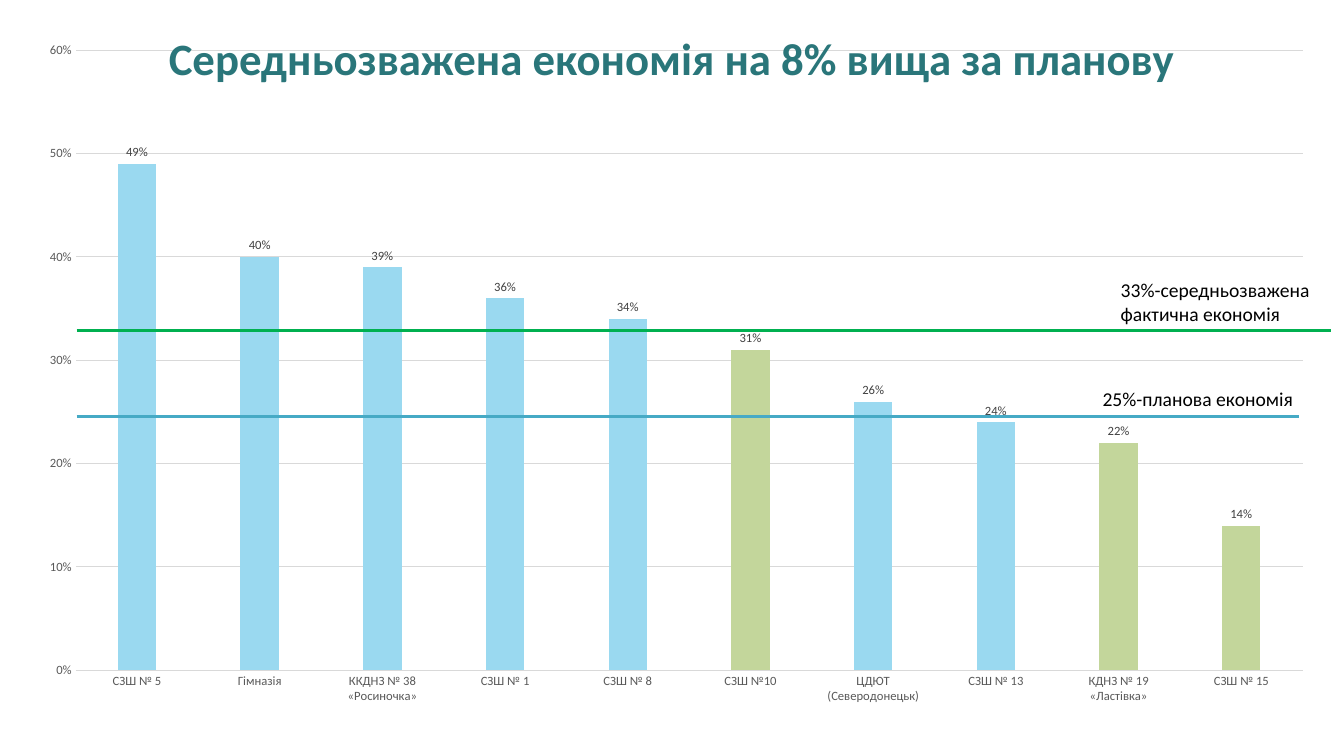
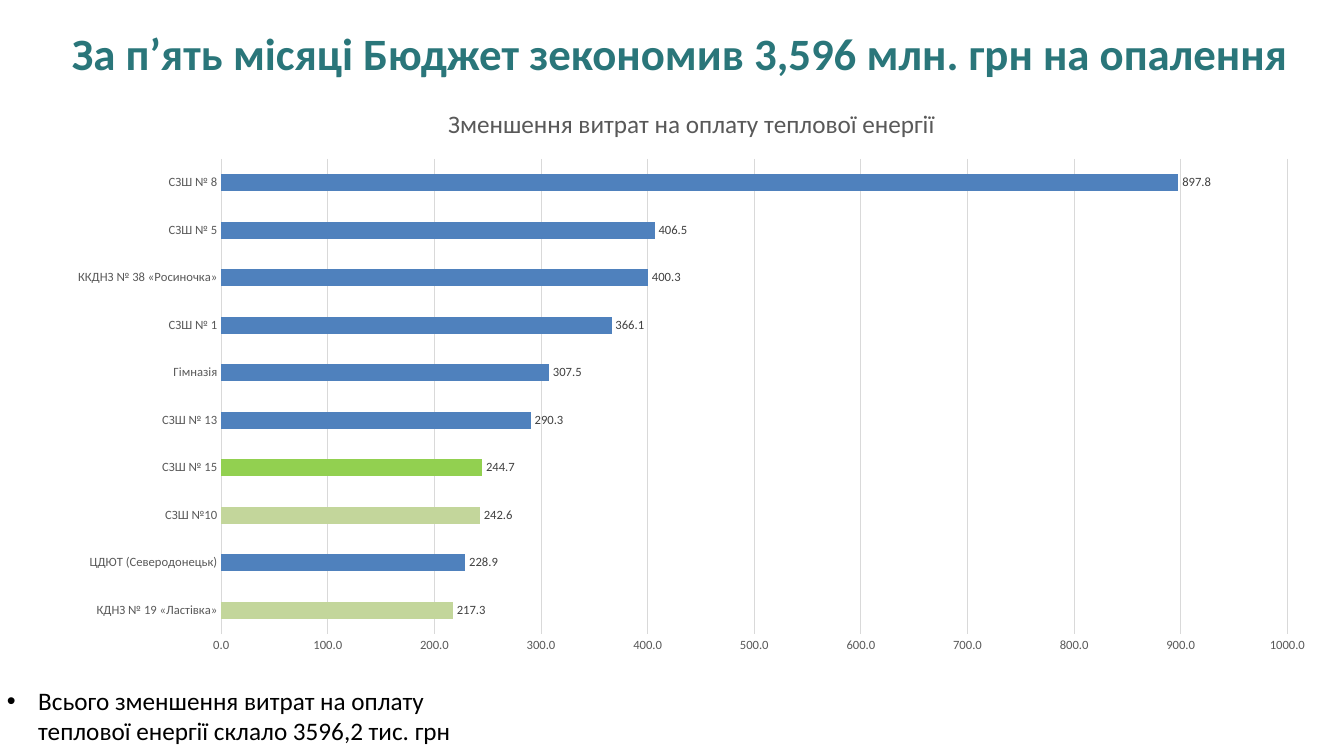
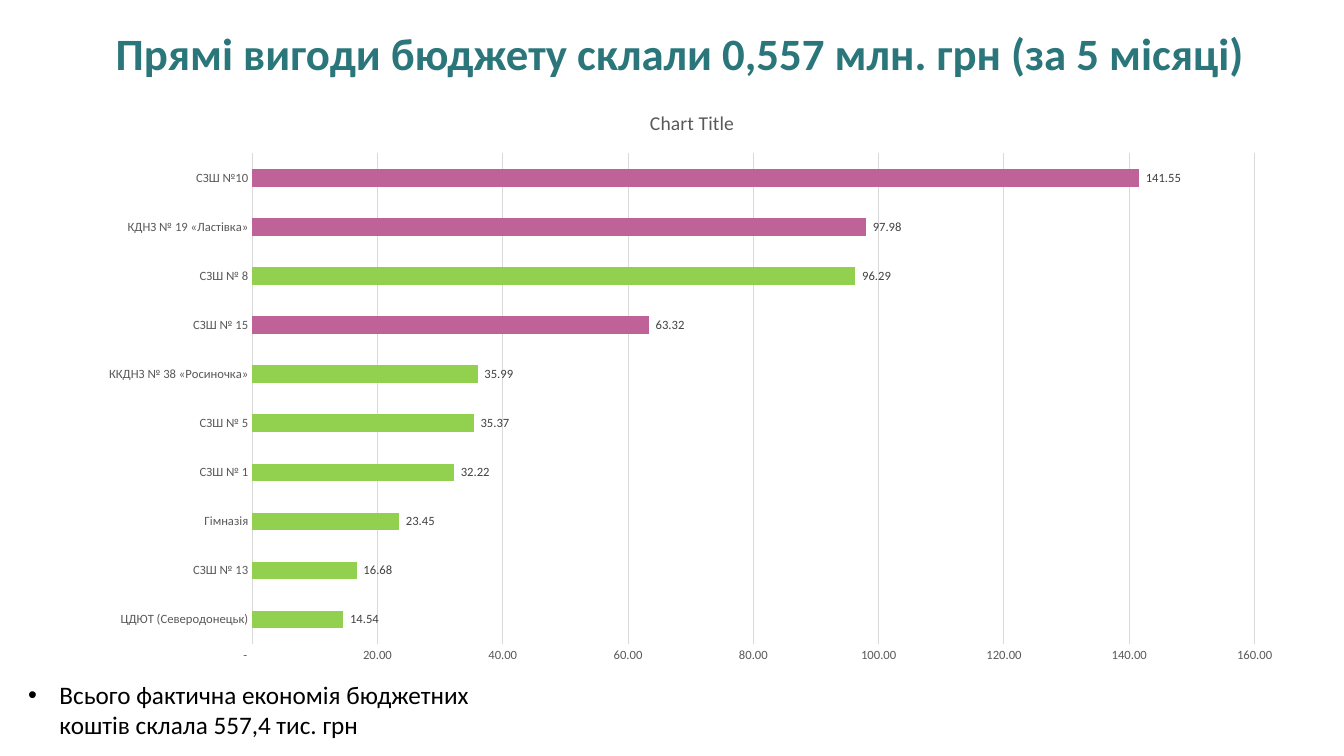
from collections import Counter

from lxml import etree
from pptx import Presentation
from pptx import util as u
from pptx.chart.data import CategoryChartData
from pptx.dml.color import RGBColor
from pptx.enum import chart as charts, shapes, text
from pptx.oxml import ns

FONT = "Calibri"
BLACK, TEAL, GRAY, LABEL, RULE = "000000", "2A767A", "595959", "404040", "D9D9D9"
SKY, BLUE, SAGE, LIME, PINK = "9AD9F0", "4F81BD", "C3D69B", "92D050", "BE6297"
PLANNED, ACTUAL = "46AAC5", "00B050"
MONEY = '_(* #,##0.00_);_(* \\(#,##0.00\\);_(* "-"??_);_(@_)'

TITLE_ONLY, TITLE_AND_BODY = 5, 1
TITLE_BOX = (1.35, 2.27, 98.55, 9.47)

ROSYNOCHKA = "ККДНЗ № 38 «Росиночка»"
LASTIVKA = "КДНЗ № 19 «Ластівка»"
YOUTH_CENTRE = "ЦДЮТ (Северодонецьк)"
GYMNASIUM = "Гімназія"

SAVINGS_SHARE = [
    ("СЗШ № 5", 0.49, SKY), (GYMNASIUM, 0.40, SKY), (ROSYNOCHKA, 0.39, SKY),
    ("СЗШ № 1", 0.36, SKY), ("СЗШ № 8", 0.34, SKY), ("СЗШ №10", 0.31, SAGE),
    (YOUTH_CENTRE, 0.26, SKY), ("СЗШ № 13", 0.24, SKY),
    (LASTIVKA, 0.22, SAGE), ("СЗШ № 15", 0.14, SAGE),
]
HEATING_SAVINGS = [
    (LASTIVKA, 217.3, SAGE), (YOUTH_CENTRE, 228.9, BLUE), ("СЗШ №10", 242.6, SAGE),
    ("СЗШ № 15", 244.7, LIME), ("СЗШ № 13", 290.3, BLUE), (GYMNASIUM, 307.5, BLUE),
    ("СЗШ № 1", 366.1, BLUE), (ROSYNOCHKA, 400.3, BLUE),
    ("СЗШ № 5", 406.5, BLUE), ("СЗШ № 8", 897.8, BLUE),
]
DIRECT_BENEFITS = [
    (YOUTH_CENTRE, 14.54, LIME), ("СЗШ № 13", 16.68, LIME), (GYMNASIUM, 23.45, LIME),
    ("СЗШ № 1", 32.22, LIME), ("СЗШ № 5", 35.37, LIME), (ROSYNOCHKA, 35.99, LIME),
    ("СЗШ № 15", 63.32, PINK), ("СЗШ № 8", 96.29, LIME),
    (LASTIVKA, 97.98, PINK), ("СЗШ №10", 141.55, PINK),
]


def color(value):
    return RGBColor.from_string(value)


class Deck:
    def __init__(self):
        self.presentation = Presentation()
        self.presentation.slide_width = u.Inches(13.333)
        self.presentation.slide_height = u.Inches(7.5)
        self.slide = None

    def new_slide(self, layout):
        layouts = self.presentation.slide_layouts
        self.slide = self.presentation.slides.add_slide(layouts[layout])

    def column(self, share):
        return u.Emu(round(self.presentation.slide_width * share / 100))

    def row(self, share):
        return u.Emu(round(self.presentation.slide_height * share / 100))

    def area(self, box):
        left, top, width, height = box
        return self.column(left), self.row(top), self.column(width), self.row(height)

    def place(self, shape, box):
        shape.left, shape.top, shape.width, shape.height = self.area(box)

    def style(self, font, size, value, bold=False):
        font.name = FONT
        font.size = u.Pt(size)
        font.bold = bold
        font.color.rgb = color(value)

    def fill(self, target, value):
        target.format.fill.solid()
        target.format.fill.fore_color.rgb = color(value)

    def add_words(self, shape, words, size, value=BLACK, bold=False):
        frame = shape.text_frame
        frame.word_wrap = True
        frame.auto_size = text.MSO_AUTO_SIZE.NONE
        paragraph = frame.paragraphs[0]
        run = paragraph.add_run()
        run.text = words
        self.style(run.font, size, value, bold)
        return paragraph

    def title(self, words, box=TITLE_BOX):
        shape = self.slide.shapes.title
        shape.element.getparent().append(shape.element)
        self.place(shape, box)
        paragraph = self.add_words(shape, words, 32, TEAL, True)
        paragraph.alignment = text.PP_ALIGN.CENTER
        shape.text_frame.vertical_anchor = text.MSO_ANCHOR.MIDDLE

    def summary(self, words, left, top):
        shape = self.slide.placeholders[1]
        self.place(shape, (left, top, 37.2, 13.47))
        paragraph = self.add_words(shape, words, 18)
        paragraph.space_before = u.Pt(0)
        properties = paragraph._p.get_or_add_pPr()
        indent = u.Inches(0.31)
        properties.set("marL", str(indent))
        properties.set("indent", str(-indent))
        etree.SubElement(properties, ns.qn("a:buFont")).set("typeface", "Arial")
        etree.SubElement(properties, ns.qn("a:buChar")).set("char", "•")

    def label(self, words, box):
        shape = self.slide.shapes.add_textbox(*self.area(box))
        self.add_words(shape, words, 14)
        shape.text_frame.auto_size = text.MSO_AUTO_SIZE.SHAPE_TO_FIT_TEXT

    def level(self, top, right, value, width):
        line = self.slide.shapes.add_connector(
            shapes.MSO_CONNECTOR.STRAIGHT,
            self.column(5.7), self.row(top), self.column(right), self.row(top))
        line.line.color.rgb = color(value)
        line.line.width = u.Pt(width)
        etree.SubElement(line.element.spPr, ns.qn("a:effectLst"))

    def chart(self, kind, box, bars, number_format, maximum, step, gap=182):
        data = CategoryChartData()
        data.categories = [name for name, _, _ in bars]
        data.add_series("Series 1", [value for _, value, _ in bars])
        chart = self.slide.shapes.add_chart(kind, *self.area(box), data).chart
        self.style(chart.font, 10, BLACK)
        chart.has_legend = False
        chart.has_title = False

        for axis in (chart.category_axis, chart.value_axis):
            axis.major_tick_mark = axis.minor_tick_mark = charts.XL_TICK_MARK.NONE
            self.style(axis.tick_labels.font, 9, GRAY)
        value_axis = chart.value_axis
        value_axis.has_major_gridlines = True
        for line in (chart.category_axis.format.line, value_axis.major_gridlines.format.line):
            line.color.rgb = color(RULE)
            line.width = u.Pt(0.75)
        value_axis.format.line.fill.background()
        value_axis.minimum_scale = 0
        value_axis.maximum_scale = maximum
        value_axis.major_unit = step

        plot = chart.plots[0]
        plot.vary_by_categories = False
        plot.gap_width = gap
        plot.has_data_labels = True
        labels = plot.data_labels
        labels.show_value = True
        labels.position = charts.XL_LABEL_POSITION.OUTSIDE_END
        self.style(labels.font, 9, LABEL)
        for item in (labels, value_axis.tick_labels):
            item.number_format = number_format
            item.number_format_is_linked = False

        series = plot.series[0]
        base = Counter(value for _, _, value in bars).most_common(1)[0][0]
        self.fill(series, base)
        for index, (_, _, value) in enumerate(bars):
            if value != base:
                self.fill(series.points[index], value)
        return chart

    def chart_title(self, chart, words, size):
        chart.has_title = True
        run = chart.chart_title.text_frame.paragraphs[0].add_run()
        run.text = words
        self.style(run.font, size, GRAY)

    def plot_area(self, chart, x, y, w, h):
        area = chart.element.find(".//" + ns.qn("c:plotArea"))
        for old in area.findall(ns.qn("c:layout")):
            area.remove(old)
        layout = etree.Element(ns.qn("c:layout"))
        area.insert(0, layout)
        manual = etree.SubElement(layout, ns.qn("c:manualLayout"))
        settings = {"layoutTarget": "inner", "xMode": "edge", "yMode": "edge",
                    "x": x, "y": y, "w": w, "h": h}
        for name, value in settings.items():
            etree.SubElement(manual, ns.qn("c:" + name)).set("val", str(value))


def savings_share_slide(deck):
    deck.new_slide(TITLE_ONLY)
    chart = deck.chart(charts.XL_CHART_TYPE.COLUMN_CLUSTERED, (2.78, 2.93, 95.1, 93.2),
                       SAVINGS_SHARE, "0%", 0.6, 0.1, gap=219)
    chart.plots[0].overlap = -27
    deck.plot_area(chart, 0.03, 0.04, 0.96, 0.88)
    deck.title("Середньозважена економія на 8% вища за планову", (0, 2.93, 100, 9.47))
    deck.level(55.07, 96.68, PLANNED, 2)
    deck.label("25%-планова економія", (81.3, 50.53, 16.5, 4.53))
    deck.level(43.73, 99, ACTUAL, 2.25)
    deck.label("33%-середньозважена фактична економія", (82.65, 36.13, 17.7, 7.6))


def heating_savings_slide(deck):
    deck.new_slide(TITLE_AND_BODY)
    chart = deck.chart(charts.XL_CHART_TYPE.BAR_CLUSTERED, (3.9, 11.2, 95.1, 76.67),
                       HEATING_SAVINGS, "0.0", 1000, 100)
    deck.chart_title(chart, "Зменшення витрат на оплату теплової енергії", 18)
    deck.title("За п’ять місяці Бюджет зекономив 3,596 млн. грн на опалення")
    deck.summary("Всього зменшення витрат на оплату теплової енергії склало 3596,2 тис. грн",
                 -0.23, 90)


def direct_benefits_slide(deck):
    deck.new_slide(TITLE_AND_BODY)
    chart = deck.chart(charts.XL_CHART_TYPE.BAR_CLUSTERED, (6.3, 11.73, 90.38, 77.47),
                       DIRECT_BENEFITS, MONEY, 160, 20)
    deck.chart_title(chart, "Chart Title", 14)
    deck.title("Прямі вигоди бюджету склали 0,557 млн. грн (за 5 місяці)")
    deck.summary("Всього фактична економія бюджетних коштів склала 557,4 тис. грн", 1.35, 89.2)


def main():
    deck = Deck()
    savings_share_slide(deck)
    heating_savings_slide(deck)
    direct_benefits_slide(deck)
    deck.presentation.save("out.pptx")


if __name__ == "__main__":
    main()
